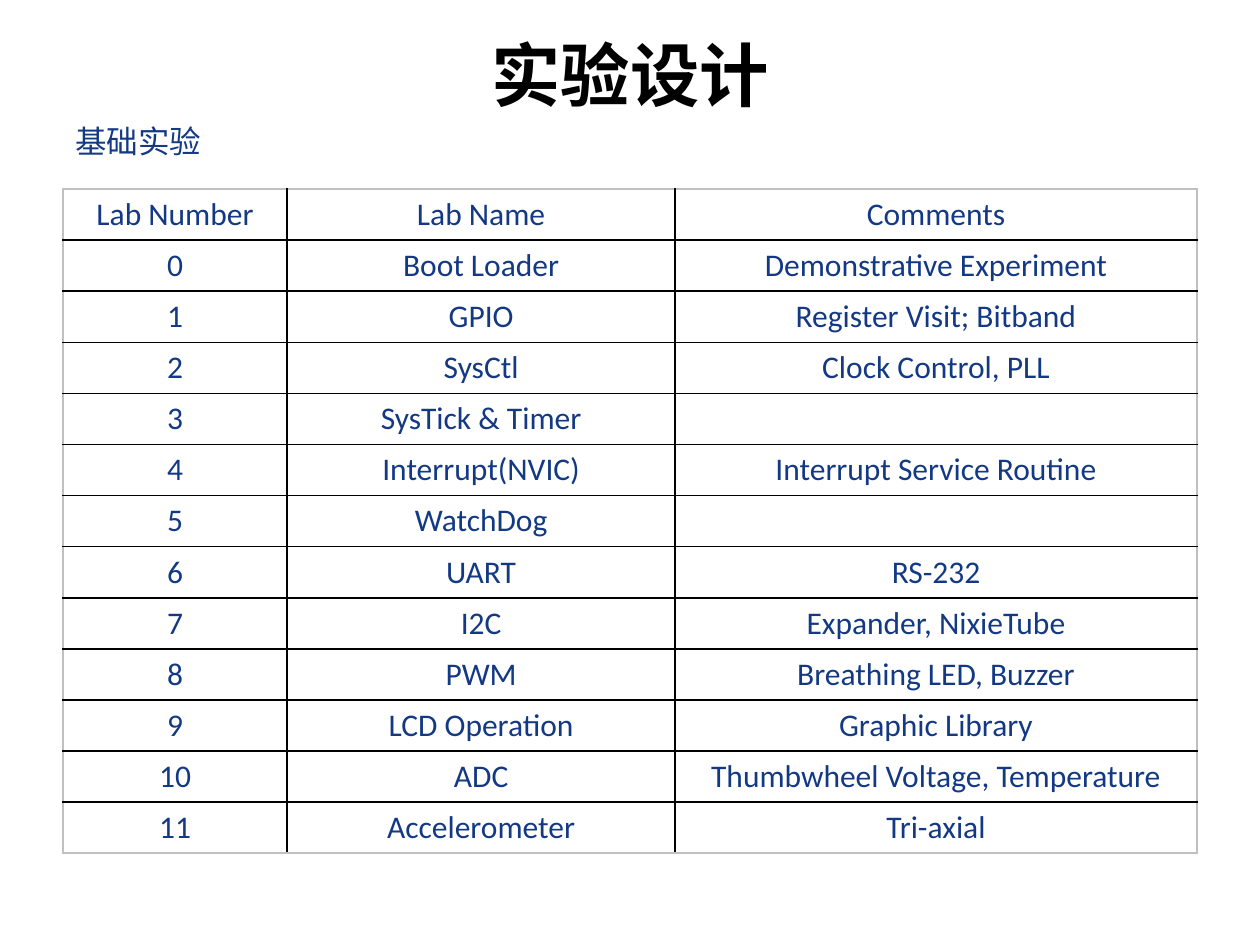
import pptx
import pptx.dml.color
import pptx.enum.text
import pptx.oxml
import pptx.oxml.ns
import pptx.util
from pptx.util import Cm

BLACK = pptx.dml.color.RGBColor(0x00, 0x00, 0x00)
NAVY = pptx.dml.color.RGBColor(0x13, 0x39, 0x84)
GREY = pptx.dml.color.RGBColor(0xC0, 0xC0, 0xC0)

LABS = [
    ("Lab Number", "Lab Name", "Comments"),
    ("0", "Boot Loader", "Demonstrative Experiment"),
    ("1", "GPIO", "Register Visit; Bitband"),
    ("2", "SysCtl", "Clock Control, PLL"),
    ("3", "SysTick & Timer", ""),
    ("4", "Interrupt(NVIC)", "Interrupt Service Routine"),
    ("5", "WatchDog", ""),
    ("6", "UART", "RS-232"),
    ("7", "I2C", "Expander, NixieTube"),
    ("8", "PWM", "Breathing LED, Buzzer"),
    ("9", "LCD Operation", "Graphic Library"),
    ("10", "ADC", "Thumbwheel Voltage, Temperature"),
    ("11", "Accelerometer", "Tri-axial"),
]
COL_WIDTHS = [Cm(4.52), Cm(7.82), Cm(10.52)]
ROW_HEIGHT = Cm(1.03)


def format_text(p, size, color, bold=False):
    for r in p.runs:
        r.font.name = "Calibri"
        r.font.size = pptx.util.Pt(size)
        r.font.bold = bold
        r.font.color.rgb = color


def add_border(cell, side, color):
    """Draw a 1 pt line on one side (L, R, T or B, called in that order)."""
    cell._tc.get_or_add_tcPr().append(pptx.oxml.parse_xml(
        f'<a:ln{side} {pptx.oxml.ns.nsdecls("a")} w="12700"><a:solidFill>'
        f'<a:srgbClr val="{color}"/></a:solidFill></a:ln{side}>'))


prs = pptx.Presentation()
prs.slide_width, prs.slide_height = Cm(25.4), Cm(19.05)
s = prs.slides.add_slide(prs.slide_layouts[5])

# Title, lifted by a deep bottom margin to leave room for the subtitle
sp = s.shapes.title
sp.left, sp.top, sp.width, sp.height = Cm(1.27), Cm(0.76), Cm(22.86), Cm(3.18)
tf = sp.text_frame
tf.text = "实验设计"
tf.auto_size = pptx.enum.text.MSO_AUTO_SIZE.NONE
tf.vertical_anchor = pptx.enum.text.MSO_ANCHOR.MIDDLE
tf.margin_bottom = Cm(1.85)
p = tf.paragraphs[0]
p.alignment = pptx.enum.text.PP_ALIGN.CENTER
format_text(p, 39.6, BLACK, bold=True)

# Lab table
table = s.shapes.add_table(
    len(LABS), len(COL_WIDTHS), Cm(1.27), Cm(3.81),
    sum(COL_WIDTHS), ROW_HEIGHT * len(LABS)).table
table.horz_banding = False
table.first_row = False
for column, width in zip(table.columns, COL_WIDTHS):
    column.width = width
last_row, last_col = len(LABS) - 1, len(COL_WIDTHS) - 1
for i, lab in enumerate(LABS):
    table.rows[i].height = ROW_HEIGHT
    for j, text in enumerate(lab):
        cell = table.cell(i, j)
        cell.text = text
        cell.vertical_anchor = pptx.enum.text.MSO_ANCHOR.MIDDLE
        p = cell.text_frame.paragraphs[0]
        p.alignment = pptx.enum.text.PP_ALIGN.CENTER
        format_text(p, 18, NAVY)
        outer = {"L": j == 0, "R": j == last_col, "T": i == 0, "B": i == last_row}
        for side, is_outer in outer.items():
            add_border(cell, side, GREY if is_outer else BLACK)
        cell.fill.background()

# Subtitle
sp = s.shapes.add_textbox(Cm(1.27), Cm(2.34), Cm(12.98), Cm(1.02))
tf = sp.text_frame
tf.word_wrap = True
tf.text = "基础实验"
tf.auto_size = pptx.enum.text.MSO_AUTO_SIZE.SHAPE_TO_FIT_TEXT
format_text(tf.paragraphs[0], 18, NAVY)

prs.save("out.pptx")
